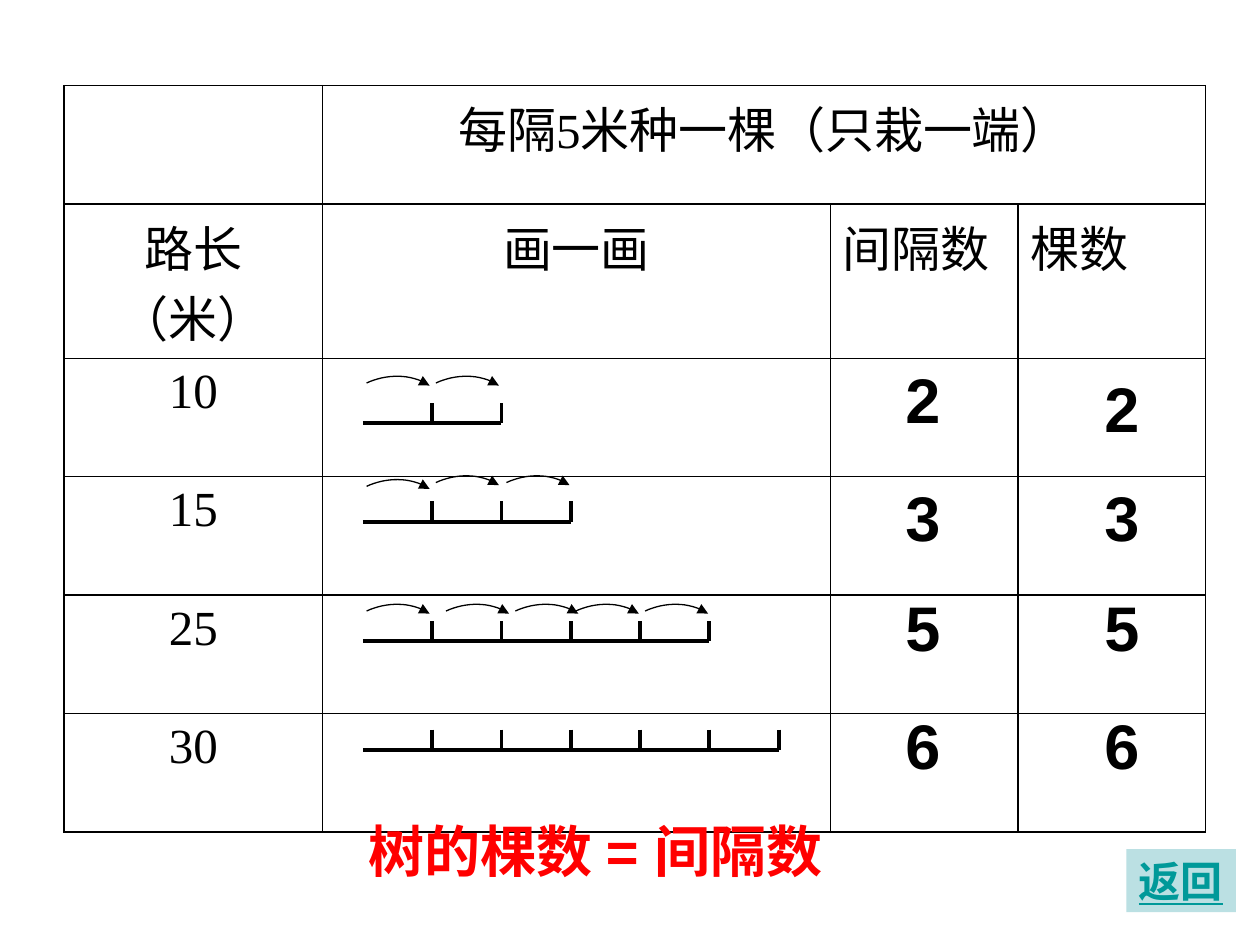
import pptx
import pptx.util
import pptx.dml.color
import pptx.enum.shapes
import pptx.enum.text
import pptx.oxml.ns
import lxml.etree

Inches, Pt, qn = pptx.util.Inches, pptx.util.Pt, pptx.oxml.ns.qn
CENTER = pptx.enum.text.PP_ALIGN.CENTER
LEFT = pptx.enum.text.PP_ALIGN.LEFT

COLORS = {"ink": "000000", "conclusion": "FF0000", "button": "BBE0E3", "link": "009999"}

TABLE_LEFT, TABLE_TOP = 0.51, 0.68
COLUMN_WIDTHS = [2.05, 4.03, 1.49, 1.49]
ROW_HEIGHTS = [0.94, 0.82, 0.94, 0.94, 0.94, 0.94]
TABLE_TEXT = [
    ["", "每隔5米种一棵（只栽一端）", "", ""],
    ["路长（米）", "画一画", "间隔数", "棵数"],
    ["10", "", "", ""],
    ["15", "", "", ""],
    ["25", "", "", ""],
    ["30", "", "", ""],
]

ROAD_LEFT, GAP_WIDTH, TREE_HEIGHT = 2.88, 0.55, 0.16
ROADS = [
    {"gaps": 2, "ground": 3.36, "hops": [(2.91, 3.04), (3.46, 3.04)], "answer_tops": (2.81, 2.88)},
    {"gaps": 3, "ground": 4.14, "hops": [(2.91, 3.86), (3.46, 3.83), (4.02, 3.83)],
     "answer_tops": (3.75, 3.75)},
    {"gaps": 5, "ground": 5.09, "hops": [(x, 4.85) for x in (2.91, 3.54, 4.09, 4.57, 5.12)],
     "answer_tops": (4.62, 4.62)},
    {"gaps": 6, "ground": 5.95, "hops": [], "answer_tops": (5.56, 5.56)},
]
ANSWER_LEFTS = (6.89, 8.47)
HOP_CURVE = [(0, 0), (0.15, -0.07), (0.35, -0.08), (0.5, 0.02)]
HOP_STEPS = 16


def rgb(name):
    return pptx.dml.color.RGBColor.from_string(COLORS[name])


def add_run(paragraph, text, size, font, color, bold=False, underline=False):
    run = paragraph.add_run()
    run.text = text
    run.font.size, run.font.name = Pt(size), font
    run.font.bold, run.font.underline = bold, underline
    run.font.color.rgb = rgb(color)


def write_label(shape, text, size, color, align=LEFT, underline=False):
    frame = shape.text_frame
    frame.word_wrap = True
    frame.auto_size = pptx.enum.text.MSO_AUTO_SIZE.SHAPE_TO_FIT_TEXT
    frame.vertical_anchor = pptx.enum.text.MSO_ANCHOR.TOP
    paragraph = frame.paragraphs[0]
    paragraph.alignment = align
    spacing = lxml.etree.SubElement(paragraph._p.get_or_add_pPr(), qn("a:spcBef"))
    lxml.etree.SubElement(spacing, qn("a:spcPct"), val="50000")
    add_run(paragraph, text, size, "Arial", color, True, underline)


def add_label(slide, box, *label):
    write_label(slide.shapes.add_textbox(*map(Inches, box)), *label)


def add_borders(cell):
    properties = cell._tc.get_or_add_tcPr()
    for position, side in enumerate(("lnL", "lnR", "lnT", "lnB")):
        border = lxml.etree.Element(qn("a:" + side), w=str(Pt(1)))
        fill = lxml.etree.SubElement(border, qn("a:solidFill"))
        lxml.etree.SubElement(fill, qn("a:srgbClr"), val=COLORS["ink"])
        properties.insert(position, border)


def add_planting_table(slide):
    table = slide.shapes.add_table(
        len(ROW_HEIGHTS), len(COLUMN_WIDTHS), Inches(TABLE_LEFT), Inches(TABLE_TOP),
        Inches(sum(COLUMN_WIDTHS)), Inches(sum(ROW_HEIGHTS))).table
    table.first_row = table.horz_banding = False
    for column, width in zip(table.columns, COLUMN_WIDTHS):
        column.width = Inches(width)
    for row, height in zip(table.rows, ROW_HEIGHTS):
        row.height = Inches(height)
    table.cell(0, 1).merge(table.cell(0, 3))
    for r, texts in enumerate(TABLE_TEXT):
        for c, text in enumerate(texts):
            cell = table.cell(r, c)
            cell.fill.background()
            add_borders(cell)
            if text:
                paragraph = cell.text_frame.paragraphs[0]
                paragraph.alignment = CENTER if c < 2 else LEFT
                add_run(paragraph, text, 28, "Times New Roman", "ink")


def add_line(slide, x1, y1, x2, y2):
    line = slide.shapes.add_connector(
        pptx.enum.shapes.MSO_CONNECTOR.STRAIGHT, *map(Inches, (x1, y1, x2, y2)))
    line.line.width = Pt(2.25)
    line.line.color.rgb = rgb("ink")
    lxml.etree.SubElement(line.element.spPr, qn("a:effectLst"))


def curve_point(t):
    weights = ((1 - t) ** 3, 3 * t * (1 - t) ** 2, 3 * t * t * (1 - t), t ** 3)
    return [sum(w * p[axis] for w, p in zip(weights, HOP_CURVE)) for axis in (0, 1)]


def add_hop(slide, left, top):
    points = [(Inches(left + dx), Inches(top + dy))
              for dx, dy in (curve_point(i / HOP_STEPS) for i in range(HOP_STEPS + 1))]
    builder = slide.shapes.build_freeform(*points[0])
    builder.add_line_segments(points[1:], close=False)
    hop = builder.convert_to_shape()
    hop.shadow.inherit = False
    hop.fill.background()
    hop.line.width = Pt(0.75)
    hop.line.color.rgb = rgb("ink")
    lxml.etree.SubElement(hop.element.spPr.find(qn("a:ln")), qn("a:tailEnd"), type="triangle")


def add_road(slide, road):
    gaps, ground = road["gaps"], road["ground"]
    add_line(slide, ROAD_LEFT, ground, ROAD_LEFT + gaps * GAP_WIDTH, ground)
    for tree in range(1, gaps + 1):
        x = ROAD_LEFT + tree * GAP_WIDTH
        add_line(slide, x, ground - TREE_HEIGHT, x, ground)
    for hop in road["hops"]:
        add_hop(slide, *hop)
    for left, top in zip(ANSWER_LEFTS, road["answer_tops"]):
        add_label(slide, (left, top, 0.87, 0.7), str(gaps), 36, "ink", CENTER)


def add_back_button(slide):
    button = slide.shapes.add_shape(
        pptx.enum.shapes.MSO_SHAPE.RECTANGLE, *map(Inches, (8.94, 6.74, 0.87, 0.5)))
    button.shadow.inherit = False
    button.fill.solid()
    button.fill.fore_color.rgb = rgb("button")
    button.line.fill.background()
    write_label(button, "返回", 24, "link", LEFT, True)


def main():
    deck = pptx.Presentation()
    deck.slide_width, deck.slide_height = Inches(10), Inches(7.5)
    slide = deck.slides.add_slide(deck.slide_layouts[6])
    add_planting_table(slide)
    for road in ROADS:
        add_road(slide, road)
    add_back_button(slide)
    add_label(slide, (2.83, 6.43, 4.61, 0.63), "树的棵数 = 间隔数", 32, "conclusion")
    deck.save("out.pptx")


if __name__ == "__main__":
    main()
